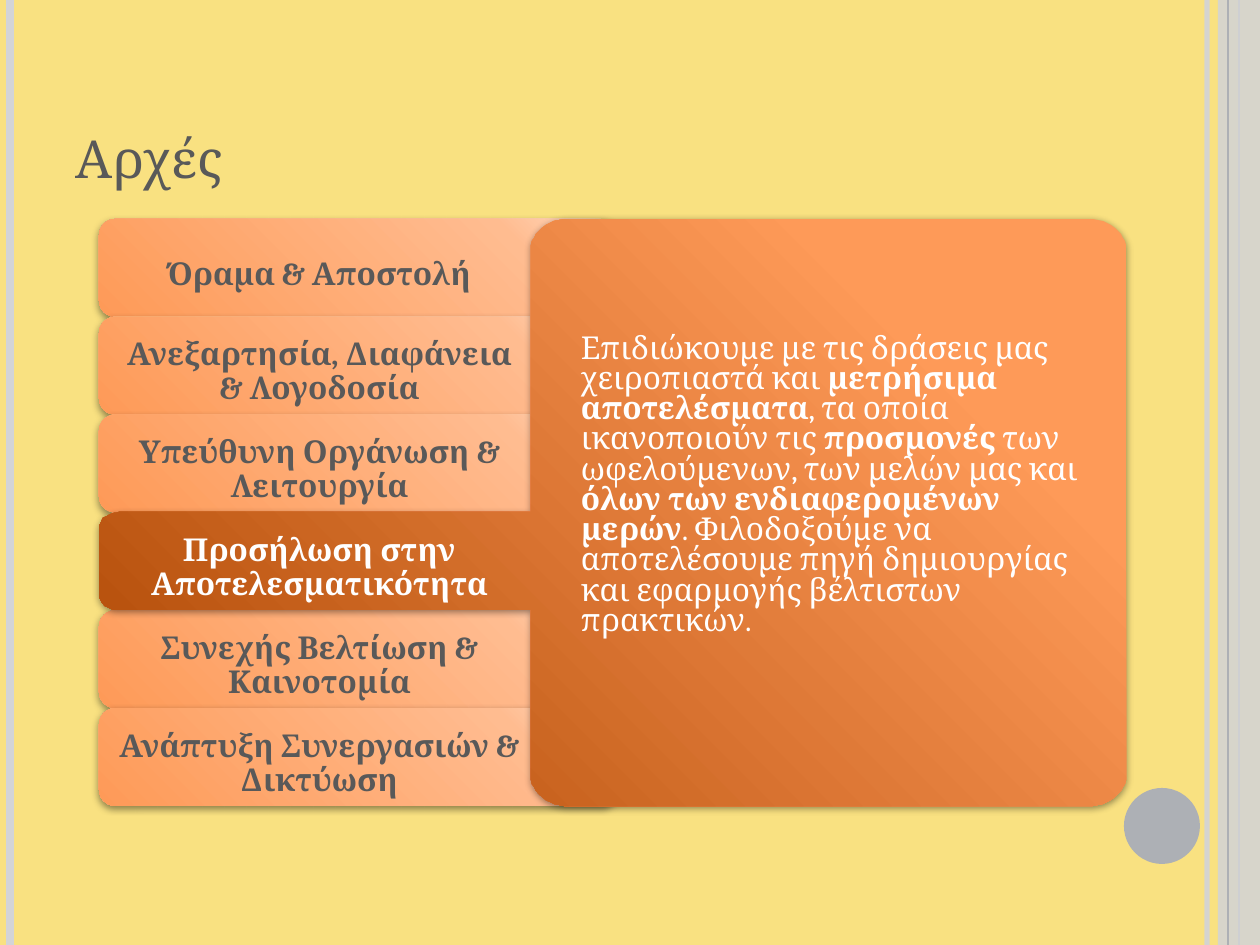
import math

from lxml import etree
from pptx import Presentation
from pptx.dml.color import RGBColor
from pptx.enum import shapes, text
from pptx.oxml import ns, parse_xml
from pptx.util import Pt

SCALE = 914400 / 126
FONT = "Cambria"
COLOURS = {
    "back": "F9E181", "pale": "D3D4D7", "grey": "ADB0B5", "dark": "595959", "white": "FFFFFF",
    "rust": "AC4501", "orange": "FE9A58", "peach": "FFBC90", "cream": "FFDDC7",
}
TABS = [
    "Όραμα & Αποστολή",
    "Ανεξαρτησία, Διαφάνεια & Λογοδοσία",
    "Υπεύθυνη Οργάνωση & Λειτουργία",
    "Προσήλωση στην Αποτελεσματικότητα",
    "Συνεχής Βελτίωση & Καινοτομία",
    "Ανάπτυξη Συνεργασιών & Δικτύωση",
]
ACTIVE = 3
BODY = [  # wording, bold
    ("Επιδιώκουμε με τις δράσεις μας χειροπιαστά και ", False),
    ("μετρήσιμα αποτελέσματα", True),
    (", τα οποία ικανοποιούν τις ", False),
    ("προσμονές", True),
    (" των ωφελούμενων, των μελών μας και ", False),
    ("όλων των ενδιαφερομένων μερών", True),
    (". Φιλοδοξούμε να αποτελέσουμε πηγή δημιουργίας και εφαρμογής βέλτιστων πρακτικών.", False),
]


def px(length):
    return round(length * SCALE)


def colour(name):
    return RGBColor.from_string(COLOURS[name])


def set_alpha(fill_parent, percent):
    for node in fill_parent.iter(ns.qn("a:srgbClr")):
        etree.SubElement(node, ns.qn("a:alpha")).set("val", str(percent * 1000))


def add_bar(page, x, height, points, name, alpha=100):
    line = page.shapes.add_connector(shapes.MSO_CONNECTOR.STRAIGHT, px(x), 0, px(x), px(height))
    line.line.width = Pt(points)
    line.line.color.rgb = colour(name)
    if alpha < 100:
        set_alpha(line._element.spPr, alpha)
    etree.SubElement(line._element.spPr, ns.qn("a:effectLst"))


def add_plain(page, kind, box, name, alpha=100):
    shape = page.shapes.add_shape(kind, *map(px, box))
    shape.fill.solid()
    shape.fill.fore_color.rgb = colour(name)
    if alpha < 100:
        set_alpha(shape._element.spPr, alpha)
    shape.line.fill.background()
    shape.shadow.inherit = False


def add_frame(page, width, height):
    """Draw the side bars and the disc at the page edges."""
    add_bar(page, 1207, height, 3, "pale", 93)
    add_bar(page, 10, height, 4.5, "pale")
    add_bar(page, 1239, height, 1.5, "grey")
    add_plain(page, shapes.MSO_SHAPE.RECTANGLE, (1218, 0, width - 1218, height), "pale", 87)
    add_bar(page, 1228, height, 0.75, "grey")
    add_plain(page, shapes.MSO_SHAPE.OVAL, (1124, 788, 76, 76), "grey")


def glow(shape, names):
    """Fill from the lower left corner outwards, and cast a soft shadow below."""
    stops = "".join(
        f'<a:gs pos="{place}"><a:srgbClr val="{COLOURS[name]}"/></a:gs>'
        for place, name in zip((0, 80000, 100000), names))
    fill = parse_xml(
        f'<a:gradFill {ns.nsdecls("a")} rotWithShape="1"><a:gsLst>{stops}</a:gsLst>'
        '<a:path path="circle"><a:fillToRect t="100000" r="100000"/></a:path></a:gradFill>')
    shape.line.fill.background()
    shape.shadow.inherit = False
    properties = shape._element.spPr
    properties.find(ns.qn("a:ln")).addprevious(fill)
    properties.find(ns.qn("a:effectLst")).append(parse_xml(
        f'<a:outerShdw {ns.nsdecls("a")} blurRad="{Pt(4)}" dist="{Pt(1.6)}" dir="5400000" '
        'rotWithShape="0"><a:srgbClr val="000000"><a:alpha val="42000"/></a:srgbClr></a:outerShdw>'))


def corner(x, y, across, down, start):
    """Points of a quarter ellipse round (x, y), clockwise from start degrees."""
    angles = [math.radians(start + step * 7.5) for step in range(13)]
    return [(x + across * math.cos(a), y + down * math.sin(a)) for a in angles]


def add_panel(page, box, tab_box):
    """Draw the large panel joined with the active tab."""
    left, top, width, height = box
    right, bottom = left + width, top + height
    tab_left, tab_top, _, tab_height = tab_box
    tab_bottom = tab_top + tab_height
    points = [
        *corner(left + 38, top + 30, 38, 30, 180),
        *corner(right - 38, top + 30, 38, 30, 270),
        *corner(right - 38, bottom - 30, 38, 30, 0),
        *corner(left + 38, bottom - 30, 38, 30, 90),
        (left, tab_bottom),
        *corner(tab_left + 20, tab_bottom - 15, 20, 15, 90),
        *corner(tab_left + 20, tab_top + 15, 20, 15, 180),
        (left, tab_top),
    ]
    builder = page.shapes.build_freeform(*points[0], scale=SCALE)
    builder.add_line_segments(points[1:], close=True)
    glow(builder.convert_to_shape(), ("rust", "orange", "orange"))


def add_words(page, box, pieces, name, spacing, anchor, align):
    label = page.shapes.add_textbox(*map(px, box))
    frame = label.text_frame
    frame.word_wrap = True
    frame.vertical_anchor = anchor
    frame.margin_left = frame.margin_top = frame.margin_right = px(20)
    frame.margin_bottom = px(10)
    para = frame.paragraphs[0]
    para.alignment = align
    para.line_spacing = spacing
    for wording, bold in pieces:
        span = para.add_run()
        span.text = wording
        span.font.name, span.font.size, span.font.bold = FONT, Pt(18), bold
        span.font.color.rgb = colour(name)


def add_tab_view(page, box):
    left, top, width, height = box
    row = height / len(TABS)
    tab_boxes = [(left, top + row * index, 518, row) for index in range(len(TABS))]
    for index, tab_box in enumerate(tab_boxes):
        if index != ACTIVE:
            tab = page.shapes.add_shape(shapes.MSO_SHAPE.ROUNDED_RECTANGLE, *map(px, tab_box))
            glow(tab, ("orange", "peach", "cream"))
    add_panel(page, (left + 432, top, width - 432, height), tab_boxes[ACTIVE])
    for index, (wording, tab_box) in enumerate(zip(TABS, tab_boxes)):
        add_words(page, (left, tab_box[1] + 2, 441, row), [(wording, True)],
                  "white" if index == ACTIVE else "dark", 0.9,
                  text.MSO_ANCHOR.MIDDLE, text.PP_ALIGN.CENTER)
    add_words(page, (left + 462, top + 96, 546, 393), BODY, "white", 0.8,
              text.MSO_ANCHOR.TOP, text.PP_ALIGN.LEFT)


def add_title(page, box, wording):
    title = page.shapes.title
    title.left, title.top, title.width, title.height = map(px, box)
    frame = title.text_frame
    frame.text = wording
    frame.vertical_anchor = text.MSO_ANCHOR.BOTTOM
    para = frame.paragraphs[0]
    para.alignment = text.PP_ALIGN.LEFT
    font = para.runs[0].font
    font.name, font.size = FONT, Pt(30)
    font.color.rgb = colour("dark")


def main():
    deck = Presentation()
    deck.slide_width, deck.slide_height = px(1260), px(945)
    page = deck.slides.add_slide(deck.slide_layouts[5])
    page.background.fill.solid()
    page.background.fill.fore_color.rgb = colour("back")
    add_frame(page, 1260, 945)
    add_tab_view(page, (99, 219, 1027, 587))
    add_title(page, (63, 38, 1029, 157), "Αρχές")
    deck.save("out.pptx")


if __name__ == "__main__":
    main()
